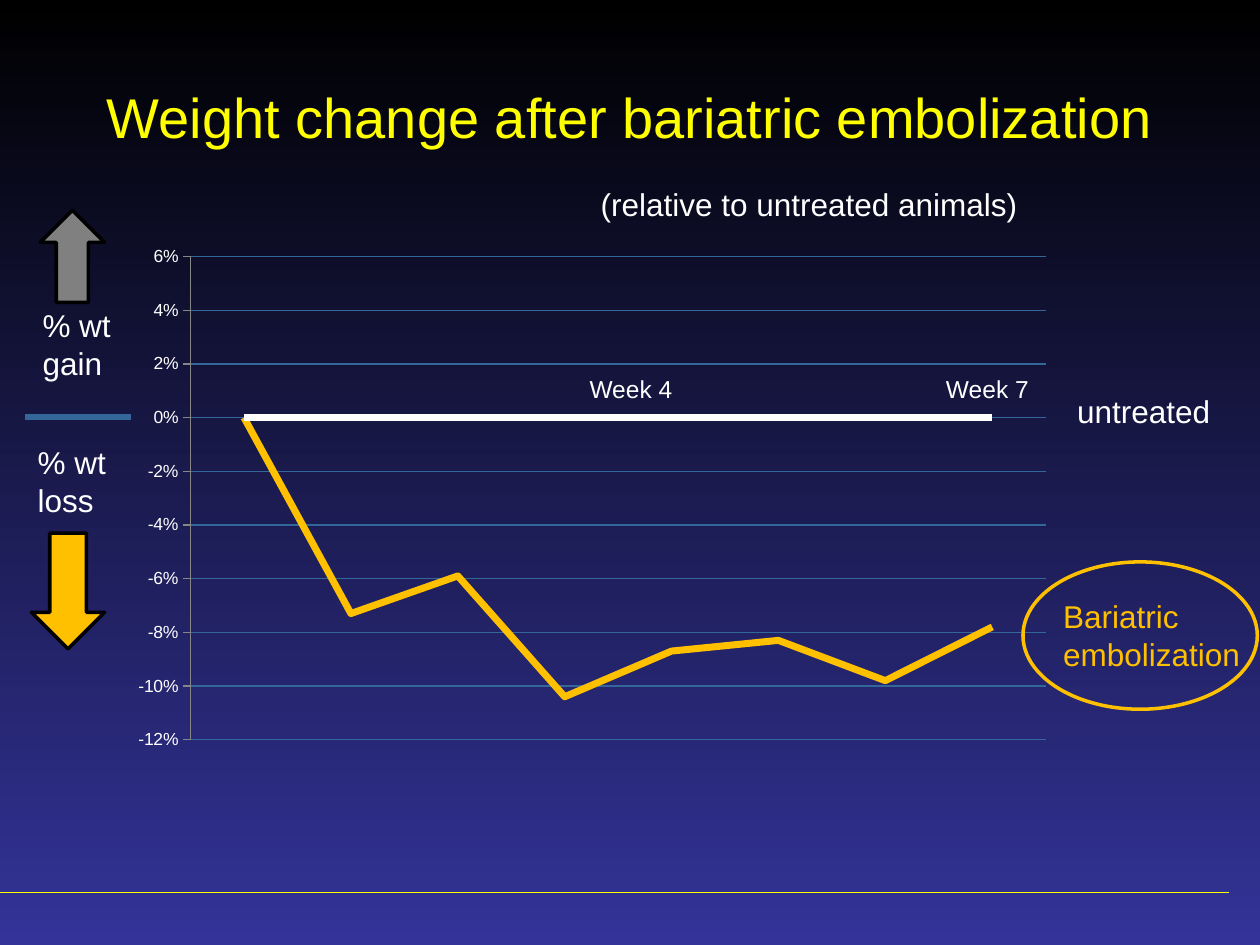
from lxml import etree
from pptx import Presentation
from pptx.chart.data import CategoryChartData
from pptx.dml.color import RGBColor
from pptx.enum.chart import XL_CHART_TYPE as CHART, XL_TICK_MARK as TICK
from pptx.enum.shapes import MSO_CONNECTOR as CONN, MSO_SHAPE as SHAPE
from pptx.enum.text import MSO_ANCHOR as ANCHOR, MSO_AUTO_SIZE as AUTO, PP_ALIGN as ALIGN
from pptx.oxml import parse_xml
from pptx.oxml.ns import nsdecls, qn
from pptx.util import Pt

COLORS = {
    "top": "000000",
    "bottom": "333399",
    "title": "FFFF00",
    "text": "FFFFFF",
    "treated": "FFC000",
    "grid": "336699",
    "axis": "868686",
    "gain": "808080",
    "outline": "000000",
}
FONT = "Arial"
LOSS = [0, -0.073, -0.059, -0.104, -0.087, -0.083, -0.098, -0.078]
PLOT = {"x": 0.075, "y": 0.04, "w": 0.905, "h": 0.92}


def rgb(name):
    return RGBColor.from_string(COLORS[name])


def set_line(line, color, width):
    line.color.rgb = rgb(color)
    line.width = Pt(width)


def set_font(font, size, color):
    font.name = FONT
    font.size = Pt(size)
    font.color.rgb = rgb(color)


def paint_background(slide):
    fill = slide.background.fill
    fill.gradient()
    fill.gradient_angle = 270
    for stop, name in zip(fill.gradient_stops, ("top", "bottom")):
        stop.color.rgb = rgb(name)


def add_text(slide, text, box, size=18, color="text"):
    sp = slide.shapes.add_textbox(*map(Pt, box))
    tf = sp.text_frame
    tf.word_wrap = True
    tf.auto_size = AUTO.SHAPE_TO_FIT_TEXT
    tf.text = text
    set_font(tf.paragraphs[0].runs[0].font, size, color)
    return tf


def add_title(slide, text):
    tf = add_text(slide, text, (36, 21.6, 648, 90), 32, "title")
    tf.auto_size = AUTO.NONE
    tf.vertical_anchor = ANCHOR.MIDDLE
    tf.paragraphs[0].alignment = ALIGN.CENTER


def add_rule(slide, x1, x2, y, color, width):
    cn = slide.shapes.add_connector(CONN.STRAIGHT, Pt(x1), Pt(y), Pt(x2), Pt(y))
    set_line(cn.line, color, width)
    etree.SubElement(cn._element.spPr, qn("a:effectLst"))


def add_figure(slide, kind, box, line, fill=None):
    sp = slide.shapes.add_shape(kind, *map(Pt, box))
    sp.shadow.inherit = False
    set_line(sp.line, line, 2)
    if fill:
        sp.fill.solid()
        sp.fill.fore_color.rgb = rgb(fill)
    else:
        sp.fill.background()


def fix_plot_area(chart):
    sizes = "".join(f'<c:{k} val="{v}"/>' for k, v in PLOT.items())
    layout = parse_xml(
        f'<c:layout {nsdecls("c")}><c:manualLayout><c:layoutTarget val="inner"/>'
        f'<c:xMode val="edge"/><c:yMode val="edge"/>{sizes}</c:manualLayout></c:layout>'
    )
    plot_area = chart._chartSpace.chart.plotArea
    for old in plot_area.findall(qn("c:layout")):
        plot_area.remove(old)
    plot_area.insert(0, layout)


def add_weight_chart(slide, box):
    data = CategoryChartData(number_format="0%")
    data.categories = [str(n) for n in range(1, len(LOSS) + 1)]
    data.add_series("Series 1", LOSS)
    data.add_series("Series 2", [0] * len(LOSS))
    chart = slide.shapes.add_chart(CHART.LINE, *map(Pt, box), data).chart
    chart.has_legend = False
    chart.has_title = False
    set_font(chart.font, 10, "text")
    fix_plot_area(chart)

    plot = chart.plots[0]
    plot.vary_by_categories = False
    for series, color in zip(plot.series, ("treated", "text")):
        series.smooth = False
        set_line(series.format.line, color, 4)

    chart.category_axis.visible = False
    axis = chart.value_axis
    axis.minimum_scale, axis.maximum_scale, axis.major_unit = -0.12, 0.06, 0.02
    axis.major_tick_mark = TICK.OUTSIDE
    axis.minor_tick_mark = TICK.NONE
    axis.tick_labels.number_format = "0%"
    axis.tick_labels.number_format_is_linked = False
    set_font(axis.tick_labels.font, 10, "text")
    set_line(axis.format.line, "axis", 0.75)
    axis.has_major_gridlines = True
    set_line(axis.major_gridlines.format.line, "grid", 0.75)


def main():
    prs = Presentation()
    prs.slide_width, prs.slide_height = Pt(720), Pt(540)
    slide = prs.slides.add_slide(prs.slide_layouts[6])
    paint_background(slide)
    add_rule(slide, 0, 702, 510, "title", 0.75)
    add_title(slide, "Weight change after bariatric embolization")
    add_weight_chart(slide, (68.4, 134.6, 540, 300.2))

    add_text(slide, "% wt gain", (17.2, 171.4, 77.8, 51))
    add_text(slide, "% wt loss", (14.4, 249.8, 77.8, 51))
    add_text(slide, "(relative to untreated animals)", (336.2, 102.2, 257.8, 29))
    for week, x in ((4, 329.8), (7, 533.5)):
        add_text(slide, f"Week {week}", (x, 210.2, 72, 24.5), 14)
    add_text(slide, "untreated", (608.4, 220.3, 108, 29))

    add_rule(slide, 14.4, 74.9, 238.3, "grid", 3)
    add_figure(slide, SHAPE.DOWN_ARROW, (18, 304.6, 41.8, 66.2), "outline", "treated")
    add_figure(slide, SHAPE.UP_ARROW, (23, 120.2, 36.7, 52.6), "outline", "gain")
    add_text(slide, "Bariatric embolization", (600.5, 337.7, 117.4, 51), color="treated")
    add_figure(slide, SHAPE.OVAL, (584.6, 321.1, 133.9, 84.2), "treated")
    prs.save("out.pptx")


if __name__ == "__main__":
    main()
